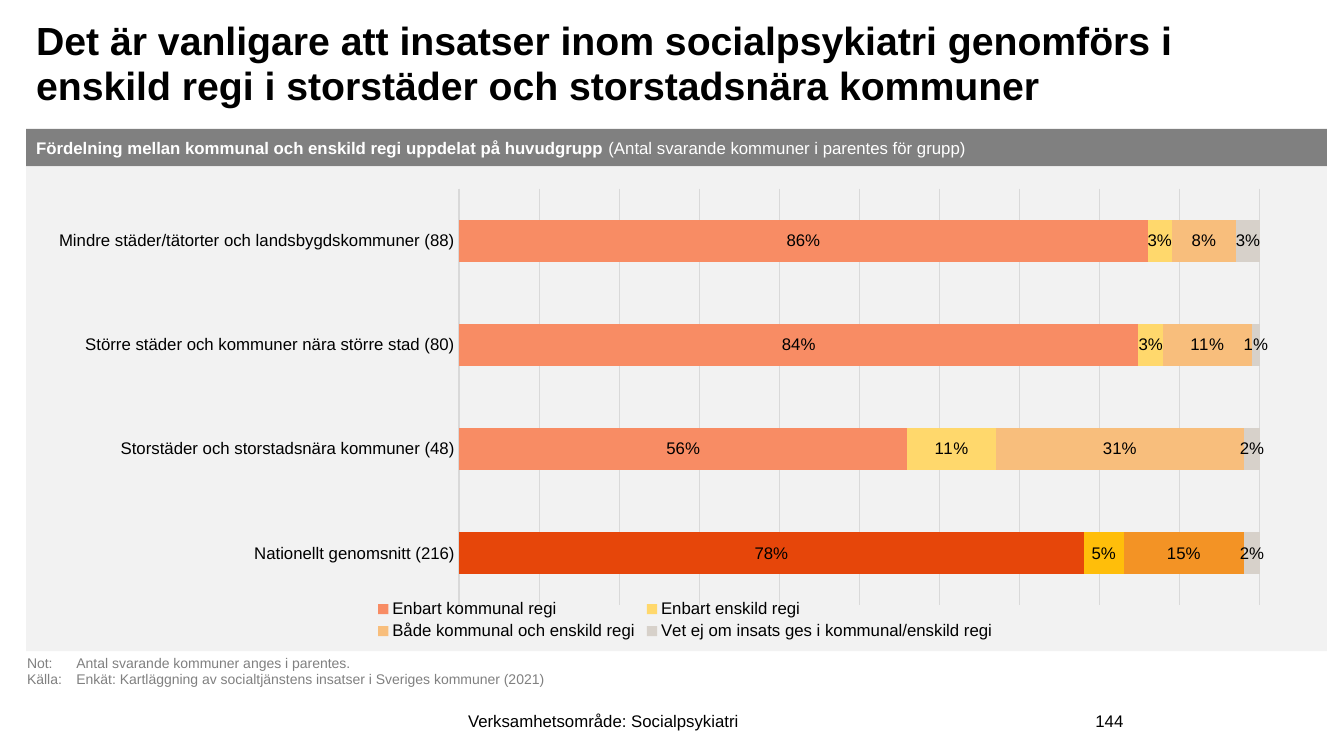
import pptx
import pptx.chart.data
import pptx.dml.color
import pptx.enum.chart
import pptx.enum.shapes
import pptx.enum.text
import pptx.oxml
import pptx.oxml.ns
import pptx.util

Inches, Pt = pptx.util.Inches, pptx.util.Pt
ALIGN = pptx.enum.text.PP_ALIGN
ANCHOR = pptx.enum.text.MSO_ANCHOR
FONT = "Arial"

# Content
COLORS = {"text": "000000", "white": "FFFFFF", "header": "808080",
          "panel": "F2F2F2", "note": "808080", "grid": "D9D9D9"}
TITLE = ("Det är vanligare att insatser inom socialpsykiatri genomförs i "
         "enskild regi i storstäder och storstadsnära kommuner")
HEADER = [("Fördelning mellan kommunal och enskild regi uppdelat på huvudgrupp ", True),
          ("(Antal svarande kommuner i parentes för grupp)", False)]
NOTES = ["Not:\tAntal svarande kommuner anges i parentes.",
         "Källa:\tEnkät: Kartläggning av socialtjänstens insatser i Sveriges kommuner (2021)"]
FOOTER = "Verksamhetsområde: Socialpsykiatri"
PAGE_NUMBER = "144"
GROUPS = ["Mindre städer/tätorter och landsbygdskommuner (88)",
          "Större städer och kommuner nära större stad (80)",
          "Storstäder och storstadsnära kommuner (48)",
          "Nationellt genomsnitt (216)"]
# Name, values, colour, colour of the national bar
SERIES = [
    ("Enbart kommunal regi", (0.86, 0.84, 0.56, 0.78), "F88C64", "E6460A"),
    ("Enbart enskild regi", (0.03, 0.03, 0.11, 0.05), "FFD86C", "FFBE0A"),
    ("Både kommunal och enskild regi", (0.08, 0.11, 0.31, 0.15), "F8BE7C", "F39325"),
    ("Vet ej om insats ges i kommunal/enskild regi", (0.03, 0.01, 0.02, 0.02), "D7D1CA", None),
]
PLOT_AREA = (0.328, 0.047, 0.626, 0.872)
LEGEND_AREA = (0.26, 0.9, 0.49, 0.1)


def rgb(value):
    return pptx.dml.color.RGBColor.from_string(value)


def style_font(font, size, color, bold=None):
    font.name, font.size, font.bold = FONT, Pt(size), bold
    font.color.rgb = rgb(color)


def write(shape, paragraphs, size, color, align=ALIGN.LEFT, anchor=ANCHOR.MIDDLE):
    """Each paragraph is a list of (text, bold) runs."""
    frame = shape.text_frame
    frame.word_wrap = True
    frame.vertical_anchor = anchor
    for index, runs in enumerate(paragraphs):
        para = frame.paragraphs[0] if index == 0 else frame.add_paragraph()
        para.alignment = align
        for text, bold in runs:
            span = para.add_run()
            span.text = text
            style_font(span.font, size, color, bold)
    return frame


def add_box(page, area):
    return page.shapes.add_textbox(*map(Inches, area))


def add_panel(page, area, color):
    panel = page.shapes.add_shape(pptx.enum.shapes.MSO_SHAPE.RECTANGLE, *map(Inches, area))
    panel.shadow.inherit = False
    panel.fill.solid()
    panel.fill.fore_color.rgb = rgb(color)
    panel.line.fill.background()
    return panel


def manual_layout(area, inner=False):
    x, y, width, height = area
    target = '<c:layoutTarget val="inner"/>' if inner else ""
    return pptx.oxml.parse_xml(
        f'<c:layout {pptx.oxml.ns.nsdecls("c")}><c:manualLayout>{target}'
        '<c:xMode val="edge"/><c:yMode val="edge"/>'
        f'<c:x val="{x}"/><c:y val="{y}"/><c:w val="{width}"/><c:h val="{height}"/>'
        '</c:manualLayout></c:layout>')


def place(parent, position, layout):
    for old in parent.findall(pptx.oxml.ns.qn("c:layout")):
        parent.remove(old)
    parent.insert(position, layout)


def fill_part(part, color):
    part.format.fill.solid()
    part.format.fill.fore_color.rgb = rgb(color)


def add_bars(page, area):
    data = pptx.chart.data.CategoryChartData(number_format="0%")
    data.categories = GROUPS
    for name, values, _, _ in SERIES:
        data.add_series(name, values)
    kind = pptx.enum.chart.XL_CHART_TYPE.BAR_STACKED_100
    chart = page.shapes.add_chart(kind, *map(Inches, area), data).chart
    chart.has_title = False
    style_font(chart.font, 12, COLORS["text"])

    # Axes
    groups, shares = chart.category_axis, chart.value_axis
    groups.reverse_order = True
    groups.major_tick_mark = pptx.enum.chart.XL_TICK_MARK.NONE
    style_font(groups.tick_labels.font, 12, COLORS["text"])
    shares.visible = False
    shares.minimum_scale, shares.maximum_scale, shares.major_unit = 0, 1, 0.1
    shares.has_major_gridlines = True
    for line in (groups.format.line, shares.major_gridlines.format.line):
        line.color.rgb = rgb(COLORS["grid"])
        line.width = Pt(0.75)

    # Bars and labels
    plot = chart.plots[0]
    plot.gap_width, plot.overlap, plot.vary_by_categories = 150, 100, False
    for series, (_, _, color, national) in zip(plot.series, SERIES):
        fill_part(series, color)
        if national:
            fill_part(series.points[len(GROUPS) - 1], national)
        labels = series.data_labels
        labels.show_value = True
        labels.number_format, labels.number_format_is_linked = "0%", False
        labels.position = pptx.enum.chart.XL_LABEL_POSITION.CENTER
        style_font(labels.font, 12, COLORS["text"])

    # Legend and plot placement
    chart.has_legend = True
    legend = chart.legend
    legend.position = pptx.enum.chart.XL_LEGEND_POSITION.BOTTOM
    legend.include_in_layout = False
    style_font(legend.font, 12, COLORS["text"])
    qn = pptx.oxml.ns.qn
    place(chart.element.find(".//" + qn("c:legend")), 1, manual_layout(LEGEND_AREA))
    place(chart.element.find(".//" + qn("c:plotArea")), 0, manual_layout(PLOT_AREA, True))


def main():
    deck = pptx.Presentation()
    deck.slide_width, deck.slide_height = Inches(13.33), Inches(7.5)
    page = deck.slides.add_slide(deck.slide_layouts[6])

    # Panel, title and header band
    add_panel(page, (0.26, 1.65, 12.9, 4.81), COLORS["panel"])
    title = write(add_box(page, (0.26, 0.15, 12.81, 1.14)), [[(TITLE, True)]],
                  28, COLORS["text"], anchor=ANCHOR.TOP)
    title.paragraphs[0].line_spacing = 0.95
    write(add_panel(page, (0.26, 1.28, 12.9, 0.37), COLORS["header"]),
          [HEADER], 12, COLORS["white"])

    add_bars(page, (0.39, 1.65, 12.69, 4.74))

    # Notes with a tab stop after the lead word
    notes = write(add_box(page, (0.17, 6.44, 12.64, 0.45)),
                  [[(note, False)] for note in NOTES], 10, COLORS["note"], anchor=ANCHOR.TOP)
    for para in notes.paragraphs:
        para._p.get_or_add_pPr().append(pptx.oxml.parse_xml(
            f'<a:tabLst {pptx.oxml.ns.nsdecls("a")}>'
            f'<a:tab pos="{Inches(0.49)}" algn="l"/></a:tabLst>'))

    # Footer
    for area, text, align in (((2.69, 6.95, 6.59, 0.4), FOOTER, ALIGN.CENTER),
                              ((9.85, 6.95, 1.39, 0.4), PAGE_NUMBER, ALIGN.RIGHT)):
        write(add_box(page, area), [[(text, False)]], 12, COLORS["text"], align)

    deck.save("out.pptx")


if __name__ == "__main__":
    main()
